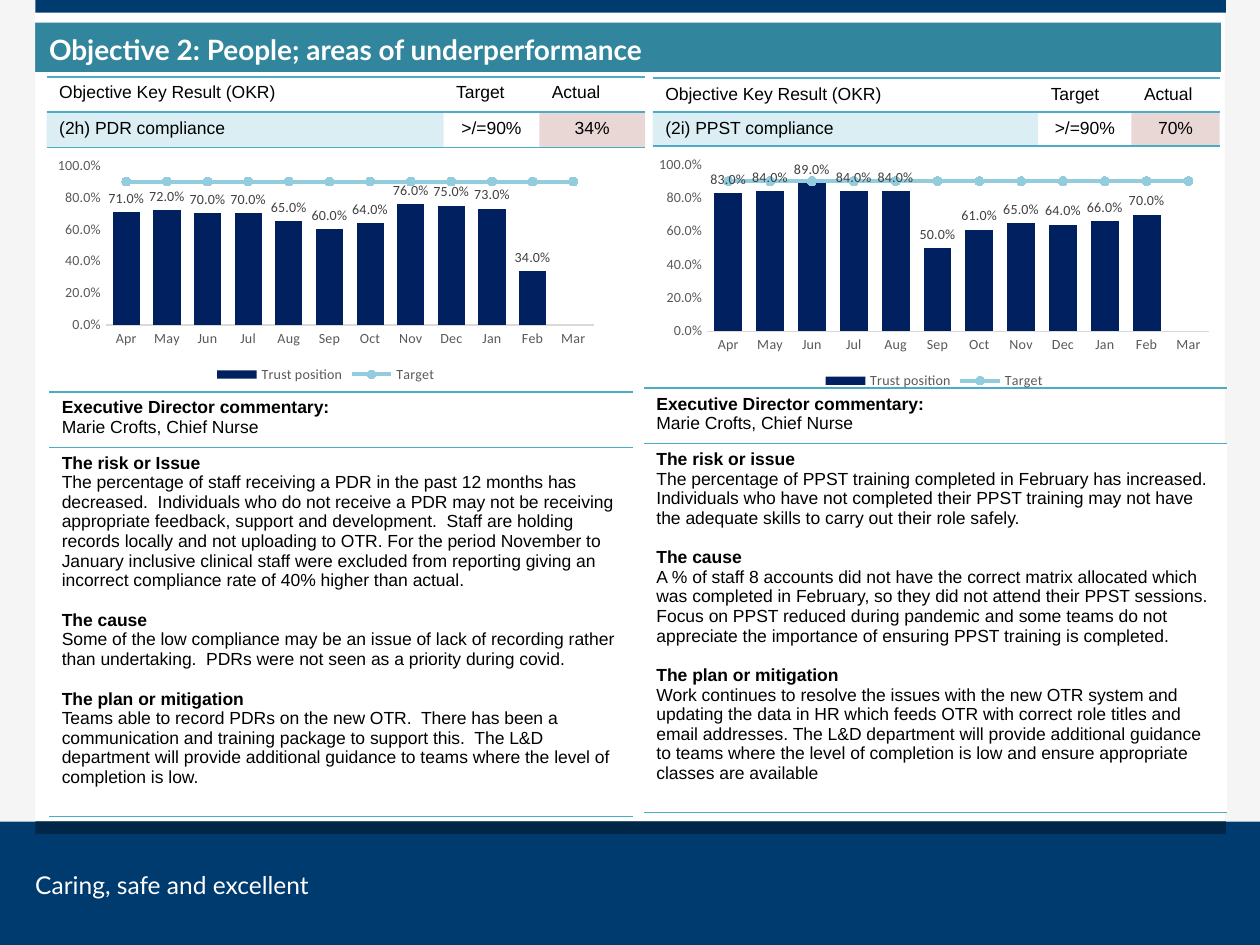
"""Build the Objective 2 slide comparing PDR and PPST compliance."""
import pptx
import pptx.chart.data
import pptx.dml.color
import pptx.enum.chart
import pptx.enum.shapes
import pptx.enum.text
import pptx.oxml
import pptx.oxml.ns
import pptx.util
from pptx.util import Inches

RGBColor = pptx.dml.color.RGBColor
NAVY = RGBColor(0x00, 0x3B, 0x6F)
DARK_NAVY = RGBColor(0x00, 0x26, 0x48)
PALE_GREY = RGBColor(0xF5, 0xF5, 0xF5)
TEAL = RGBColor(0x31, 0x85, 0x9C)
AQUA = RGBColor(0x4B, 0xAC, 0xC6)
MAROON = RGBColor(0x95, 0x37, 0x35)
BAR_BLUE = RGBColor(0x00, 0x20, 0x60)
LINE_BLUE = RGBColor(0x93, 0xCD, 0xDD)
AXIS_GREY = RGBColor(0xD9, 0xD9, 0xD9)
TEXT_GREY = RGBColor(0x59, 0x59, 0x59)
LABEL_GREY = RGBColor(0x40, 0x40, 0x40)
BLACK = RGBColor(0, 0, 0)
WHITE = RGBColor(0xFF, 0xFF, 0xFF)

TITLE = "Objective 2: People; areas of underperformance"
FOOTER = "Caring, safe and excellent"
MONTHS = ["Apr", "May", "Jun", "Jul", "Aug", "Sep", "Oct", "Nov", "Dec", "Jan", "Feb", "Mar"]
TARGET = 0.9
HEADINGS = ["Objective Key Result (OKR)", "Target", "Actual"]
DIRECTOR = [("Executive Director commentary:", "Marie Crofts, Chief Nurse")]

BANDS = [
    ((0, 0, 0.28, 6.52), PALE_GREY),
    ((9.72, 0, 0.28, 6.52), PALE_GREY),
    ((0, 6.52, 10, 0.98), NAVY),
    ((0.28, 6.52, 9.45, 0.1), DARK_NAVY),
    ((0.28, 0, 9.45, 0.1), NAVY),
]

PANELS = [
    {
        "result": ["(2h) PDR compliance", ">/=90%", "34%"],
        "result_at": (0.37, 0.61), "result_cols": [3.15, 0.76, 0.84], "result_rows": [0.28, 0.28],
        "chart_at": (0.37, 1.21, 4.43, 1.87),
        "values": [0.71, 0.72, 0.7, 0.7, 0.65, 0.6, 0.64, 0.76, 0.75, 0.73, 0.34, None],
        "notes_at": (0.39, 3.11),
        "notes": [
            ("The risk or Issue",
             "The percentage of staff receiving a PDR in the past 12 months has decreased.  Individuals who do "
             "not receive a PDR may not be receiving appropriate feedback, support and development.  Staff are "
             "holding records locally and not uploading to OTR. For the period November to January inclusive "
             "clinical staff were excluded from reporting giving an incorrect compliance rate of 40% higher "
             "than actual."),
            ("The cause",
             "Some of the low compliance may be an issue of lack of recording rather than undertaking.  PDRs "
             "were not seen as a priority during covid."),
            ("The plan or mitigation",
             "Teams able to record PDRs on the new OTR.  There has been a communication and training package to "
             "support this.  The L&D department will provide additional guidance to teams where the level of "
             "completion is low."),
        ],
    },
    {
        "result": ["(2i) PPST compliance", ">/=90%", "70%"],
        "result_at": (5.18, 0.62), "result_cols": [3.06, 0.74, 0.7], "result_rows": [0.27, 0.27],
        "chart_at": (5.14, 1.2, 4.55, 1.93),
        "values": [0.83, 0.84, 0.89, 0.84, 0.84, 0.5, 0.61, 0.65, 0.64, 0.66, 0.7, None],
        "notes_at": (5.11, 3.08),
        "notes": [
            ("The risk or issue",
             "The percentage of PPST training completed in February has increased.  Individuals who have not "
             "completed their PPST training may not have the adequate skills to carry out their role safely."),
            ("The cause",
             "A % of staff 8 accounts did not have the correct matrix allocated which was completed in "
             "February, so they did not attend their PPST sessions. Focus on PPST reduced during pandemic and "
             "some teams do not appreciate the importance of ensuring PPST training is completed."),
            ("The plan or mitigation",
             "Work continues to resolve the issues with the new OTR system and updating the data in HR which "
             "feeds OTR with correct role titles and email addresses. The L&D department will provide "
             "additional guidance to teams where the level of completion is low and ensure appropriate classes "
             "are available"),
        ],
    },
]


def assign(target, values):
    for name, value in values.items():
        setattr(target, name, value)


def set_font(font, name, size, color, bold=False):
    assign(font, {"name": name, "size": pptx.util.Pt(size), "bold": bold})
    font.color.rgb = color


def write(frame, lines):
    for index, (text, bold, gap) in enumerate(lines):
        para = frame.paragraphs[0] if index == 0 else frame.add_paragraph()
        para.space_before = pptx.util.Pt(gap)
        span = para.add_run()
        span.text = text
        set_font(span.font, "Arial", 10, BLACK, bold)


def paint(cell, color, alpha=100):
    cell.fill.solid()
    cell.fill.fore_color.rgb = color
    for node in cell.fill._xPr.iter(pptx.oxml.ns.qn("a:srgbClr")):
        node.append(pptx.oxml.parse_xml(
            f'<a:alpha {pptx.oxml.ns.nsdecls("a")} val="{alpha * 1000}"/>'))


def rule_cell(cell):
    properties = cell._tc.get_or_add_tcPr()
    for position, side in enumerate(("lnT", "lnB")):
        properties.insert(position, pptx.oxml.parse_xml(
            f'<a:{side} {pptx.oxml.ns.nsdecls("a")} w="12700"><a:solidFill>'
            f'<a:srgbClr val="{AQUA}"/></a:solidFill></a:{side}>'))


def add_grid(page, at, widths, heights):
    size = [Inches(sum(widths)), Inches(sum(heights))]
    holder = page.shapes.add_table(len(heights), len(widths), Inches(at[0]), Inches(at[1]), *size)
    for style in holder.element.iter(pptx.oxml.ns.qn("a:tableStyleId")):
        style.text = "{2D5ABB26-0587-4C30-8999-92F81FD0307C}"
    grid = holder.table
    assign(grid, {"first_row": False, "horz_banding": False})
    for column, width in zip(grid.columns, widths):
        column.width = Inches(width)
    for row, height in zip(grid.rows, heights):
        row.height = Inches(height)
    for cell in grid.iter_cells():
        cell.fill.background()
        rule_cell(cell)
    return grid


def add_result(page, panel):
    grid = add_grid(page, panel["result_at"], panel["result_cols"], panel["result_rows"])
    for column, color in enumerate((AQUA, WHITE, MAROON)):
        write(grid.cell(0, column).text_frame, [(HEADINGS[column], False, 0)])
        cell = grid.cell(1, column)
        write(cell.text_frame, [(panel["result"][column], False, 0)])
        paint(cell, color, 20)
        if column:
            cell.text_frame.paragraphs[0].alignment = pptx.enum.text.PP_ALIGN.CENTER


def add_notes(page, panel):
    grid = add_grid(page, panel["notes_at"], [4.63], [0.44, 2.93])
    paint(grid.cell(1, 0), WHITE)
    for row, sections in enumerate((DIRECTOR, panel["notes"])):
        lines = []
        for index, (heading, text) in enumerate(sections):
            lines += [(heading, True, 11.5 if index else 0), (text, False, 0)]
        write(grid.cell(row, 0).text_frame, lines)


def move_target_to_line(chart):
    bars = chart.plots[0]._element
    line = pptx.oxml.parse_xml(
        f'<c:lineChart {pptx.oxml.ns.nsdecls("c")}><c:grouping val="stacked"/>'
        '<c:varyColors val="0"/><c:marker val="1"/></c:lineChart>')
    series = bars.findall(pptx.oxml.ns.qn("c:ser"))[1]
    for node in series.findall(pptx.oxml.ns.qn("c:invertIfNegative")):
        series.remove(node)
    line.insert(2, series)
    for axis in bars.findall(pptx.oxml.ns.qn("c:axId")):
        line.append(pptx.oxml.parse_xml(
            f'<c:axId {pptx.oxml.ns.nsdecls("c")} val="{axis.get("val")}"/>'))
    bars.addnext(line)


def add_compliance_chart(page, panel):
    enums = pptx.enum.chart
    data = pptx.chart.data.CategoryChartData(number_format="0.0%")
    data.categories = MONTHS
    data.add_series("Trust position", panel["values"])
    data.add_series("Target", [TARGET] * len(MONTHS))
    place = [Inches(value) for value in panel["chart_at"]]
    chart = page.shapes.add_chart(enums.XL_CHART_TYPE.COLUMN_CLUSTERED, *place, data).chart
    assign(chart, {"has_title": False, "has_legend": True})
    set_font(chart.font, "Calibri", 8, BLACK)
    assign(chart.legend, {"position": enums.XL_LEGEND_POSITION.BOTTOM, "include_in_layout": False})
    set_font(chart.legend.font, "Calibri", 8, TEXT_GREY)
    for axis in (chart.category_axis, chart.value_axis):
        assign(axis, {"has_major_gridlines": False, "major_tick_mark": enums.XL_TICK_MARK.NONE,
                      "minor_tick_mark": enums.XL_TICK_MARK.NONE})
        set_font(axis.tick_labels.font, "Calibri", 8, TEXT_GREY)
    chart.category_axis.format.line.color.rgb = AXIS_GREY
    chart.category_axis.format.line.width = pptx.util.Pt(0.75)
    chart.value_axis.format.line.fill.background()
    assign(chart.value_axis, {"minimum_scale": 0, "maximum_scale": 1, "major_unit": 0.2})
    assign(chart.value_axis.tick_labels, {"number_format": "0.0%", "number_format_is_linked": False})
    move_target_to_line(chart)
    plot = chart.plots[0]
    assign(plot, {"gap_width": 50, "overlap": -1, "vary_by_categories": False})
    bars = plot.series[0]
    bars.format.fill.solid()
    bars.format.fill.fore_color.rgb = BAR_BLUE
    assign(bars.data_labels, {"show_value": True, "number_format": "0.0%", "number_format_is_linked": False,
                              "position": enums.XL_LABEL_POSITION.OUTSIDE_END})
    set_font(bars.data_labels.font, "Calibri", 8, LABEL_GREY)
    target = chart.plots[1].series[0]
    target.smooth = False
    target.format.line.color.rgb = LINE_BLUE
    target.format.line.width = pptx.util.Pt(2.25)
    assign(target.marker, {"style": enums.XL_MARKER_STYLE.CIRCLE, "size": 5})
    target.marker.format.fill.solid()
    target.marker.format.fill.fore_color.rgb = LINE_BLUE
    target.marker.format.line.fill.background()


def write_line(box, at, text, size, insets, bold):
    assign(box, dict(zip(("left", "top", "width", "height"), map(Inches, at))))
    frame = box.text_frame
    assign(frame, dict(zip(("margin_left", "margin_top", "margin_right", "margin_bottom"), map(Inches, insets))))
    assign(frame, {"word_wrap": True, "auto_size": pptx.enum.text.MSO_AUTO_SIZE.NONE,
                   "vertical_anchor": pptx.enum.text.MSO_ANCHOR.MIDDLE})
    para = frame.paragraphs[0]
    para.alignment = pptx.enum.text.PP_ALIGN.LEFT
    span = para.add_run()
    span.text = text
    set_font(span.font, "Lato", size, WHITE, bold)
    return para


def main():
    deck = pptx.Presentation()
    assign(deck, {"slide_width": Inches(10), "slide_height": Inches(7.5)})
    page = deck.slides.add_slide(deck.slide_layouts[5])
    for at, color in BANDS:
        band = page.shapes.add_shape(pptx.enum.shapes.MSO_SHAPE.RECTANGLE, *map(Inches, at))
        band.shadow.inherit = False
        band.fill.solid()
        band.fill.fore_color.rgb = color
        band.line.fill.background()
    title = page.shapes.title
    title.fill.solid()
    title.fill.fore_color.rgb = TEAL
    para = write_line(title, (0.26, 0.18, 9.43, 0.39), TITLE, 16, (0.13, 0.04, 0.07, 0.04), True)
    assign(para, {"line_spacing": 1.15, "space_after": pptx.util.Pt(7.5)})
    footer_at = (0.28, 6.9, 3.07, 0.24)
    footer = page.shapes.add_textbox(*map(Inches, footer_at))
    write_line(footer, footer_at, FOOTER, 14, (0, 0, 0, 0), False)
    for panel in PANELS:
        add_result(page, panel)
        add_notes(page, panel)
        add_compliance_chart(page, panel)
    deck.save("out.pptx")


if __name__ == "__main__":
    main()
